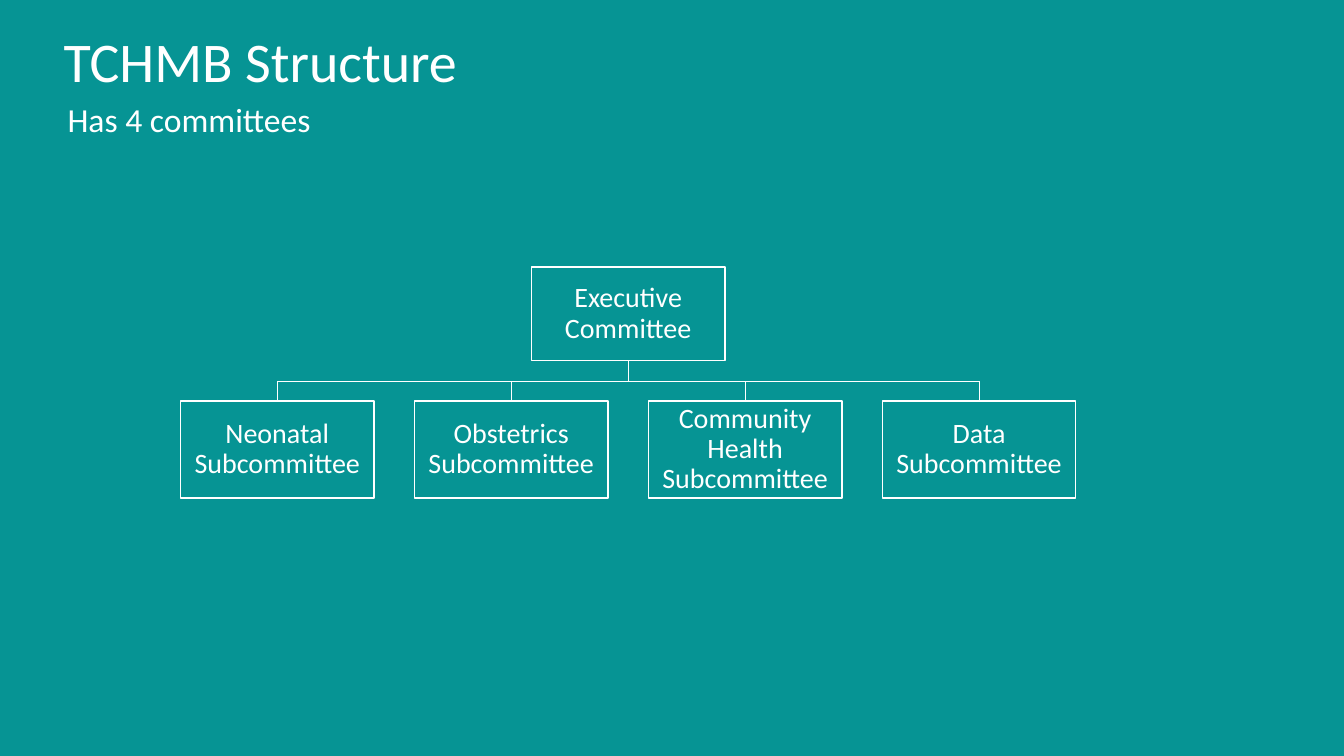
from lxml import etree
from pptx import Presentation
from pptx.dml.color import RGBColor
from pptx.enum.shapes import MSO_CONNECTOR, MSO_SHAPE
from pptx.enum.text import MSO_ANCHOR, MSO_AUTO_SIZE, PP_ALIGN
from pptx.oxml.ns import qn
from pptx.util import Inches, Pt

STRAIGHT = MSO_CONNECTOR.STRAIGHT
RECTANGLE = MSO_SHAPE.RECTANGLE
TOP, MIDDLE = MSO_ANCHOR.TOP, MSO_ANCHOR.MIDDLE
LEFT, CENTER = PP_ALIGN.LEFT, PP_ALIGN.CENTER
NO_AUTOFIT = MSO_AUTO_SIZE.NONE
TOP_SIDE, BOTTOM_SIDE = 0, 2

TEAL, WHITE = "069494", "FFFFFF"
FONT = "Calibri"
BOX_WIDTH = 1.92
FIRST_LEFT, COLUMN_STEP = 1.79, 2.32
EXECUTIVE_TOP, EXECUTIVE_HEIGHT = 2.65, 0.93
BRANCH_Y = 3.78
SUBCOMMITTEE_TOP, SUBCOMMITTEE_HEIGHT = 3.98, 0.96
SUBCOMMITTEES = [
    "Neonatal Subcommittee",
    "Obstetrics Subcommittee",
    "Community Health Subcommittee",
    "Data Subcommittee",
]


def colour(hex_text):
    """Turn a hex string into a colour."""
    return RGBColor.from_string(hex_text)


def write_text(shape, text, size, align, anchor):
    """Write one white paragraph into a shape."""
    frame = shape.text_frame
    frame.word_wrap = True
    frame.auto_size = NO_AUTOFIT
    frame.vertical_anchor = anchor
    para = frame.paragraphs[0]
    para.alignment = align
    para.line_spacing = 0.9
    para.space_before = Pt(0)
    span = para.add_run()
    span.text = text
    span.font.name = FONT
    span.font.size = Pt(size)
    span.font.color.rgb = colour(WHITE)
    return para


def place_heading(holder, text, size, left, top, width, height):
    """Move a placeholder and write its unbulleted text."""
    holder.left, holder.top = Inches(left), Inches(top)
    holder.width, holder.height = Inches(width), Inches(height)
    para = write_text(holder, text, size, LEFT, TOP)
    properties = para._p.get_or_add_pPr()
    properties.set("marL", "0")
    properties.set("indent", "0")
    etree.SubElement(properties, qn("a:buNone"))


def add_committee(page, text, left, top, height):
    """Add an outlined committee box."""
    box = page.shapes.add_shape(
        RECTANGLE, Inches(left), Inches(top), Inches(BOX_WIDTH), Inches(height)
    )
    box.shadow.inherit = False
    box.fill.solid()
    box.fill.fore_color.rgb = colour(TEAL)
    box.line.color.rgb = colour(WHITE)
    box.line.width = Pt(1)
    frame = box.text_frame
    frame.margin_left = frame.margin_right = Inches(0.01)
    frame.margin_top = frame.margin_bottom = Inches(0.01)
    write_text(box, text, 20, CENTER, MIDDLE)
    return box


def add_line(page, x1, y1, x2, y2):
    """Add a thin white straight connector."""
    line = page.shapes.add_connector(STRAIGHT, x1, y1, x2, y2)
    line.line.color.rgb = colour(WHITE)
    line.line.width = Pt(0.5)
    etree.SubElement(line._element.spPr, qn("a:effectLst"))
    return line


def centre_x(box):
    """Return the horizontal middle of a box."""
    return box.left + box.width // 2


def join_committees(page, executive, subcommittees):
    """Draw the tree from the executive box to its subcommittees."""
    branch_y = Inches(BRANCH_Y)
    middle = centre_x(executive)
    trunk = add_line(page, middle, executive.top + executive.height, middle, branch_y)
    trunk.begin_connect(executive, BOTTOM_SIDE)
    add_line(
        page, centre_x(subcommittees[0]), branch_y, centre_x(subcommittees[-1]), branch_y
    )
    for box in subcommittees:
        drop = add_line(page, centre_x(box), branch_y, centre_x(box), box.top)
        drop.end_connect(box, TOP_SIDE)


def main():
    """Build the committee structure slide."""
    deck = Presentation()
    deck.slide_width, deck.slide_height = Inches(13.33), Inches(7.5)
    page = deck.slides.add_slide(deck.slide_layouts[1])
    page.background.fill.solid()
    page.background.fill.fore_color.rgb = colour(TEAL)

    place_heading(page.shapes.title, "TCHMB Structure", 40, 0.53, 0.29, 4.47, 0.69)
    place_heading(page.placeholders[1], "Has 4 committees", 24, 0.57, 0.98, 4.47, 1.45)

    executive_left = FIRST_LEFT + COLUMN_STEP * (len(SUBCOMMITTEES) - 1) / 2
    executive = add_committee(
        page, "Executive Committee", executive_left, EXECUTIVE_TOP, EXECUTIVE_HEIGHT
    )
    subcommittees = [
        add_committee(
            page, name, FIRST_LEFT + COLUMN_STEP * column, SUBCOMMITTEE_TOP, SUBCOMMITTEE_HEIGHT
        )
        for column, name in enumerate(SUBCOMMITTEES)
    ]
    join_committees(page, executive, subcommittees)
    deck.save("out.pptx")


if __name__ == "__main__":
    main()
